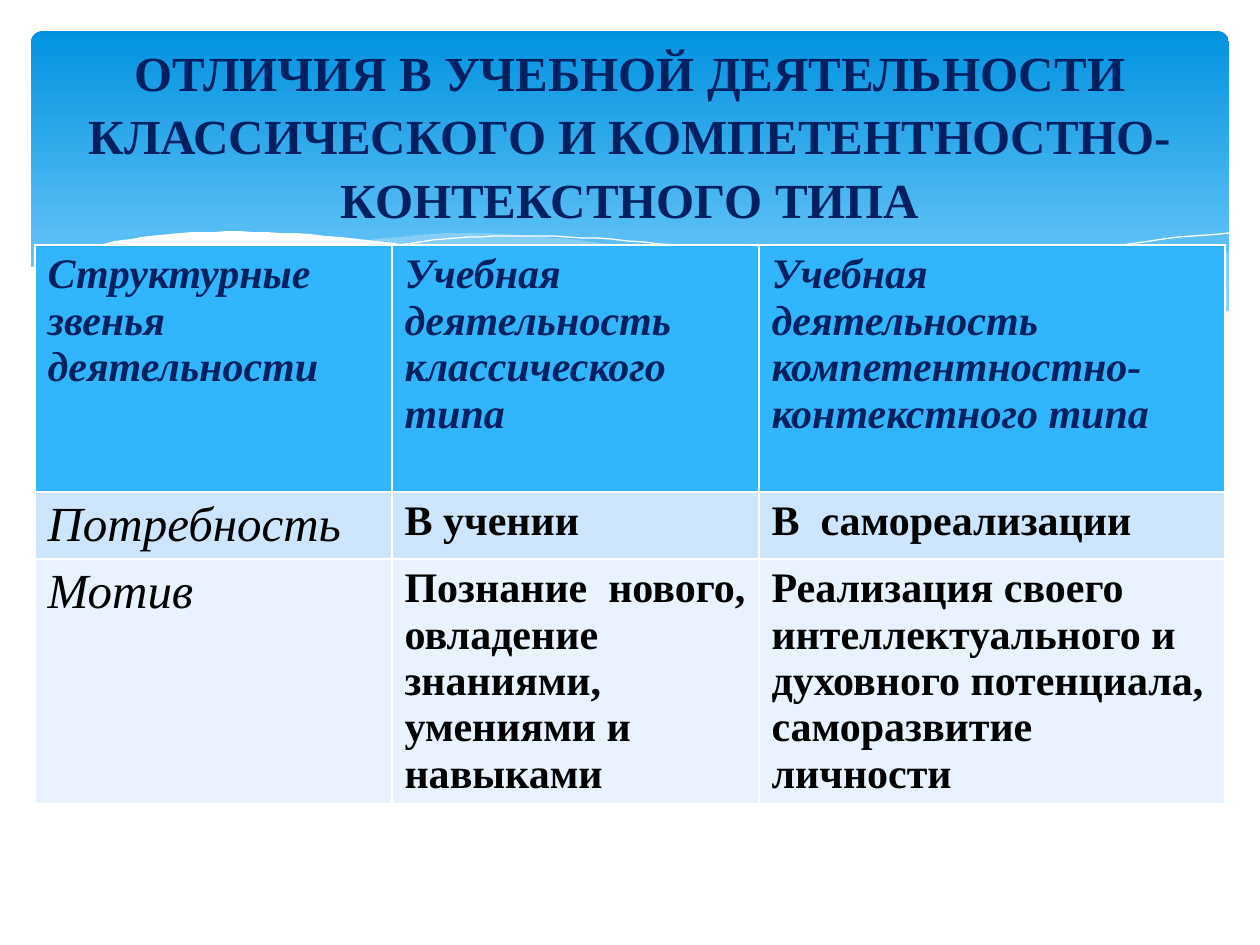
from lxml import etree
from pptx import Presentation
from pptx import util as u
from pptx.dml.color import RGBColor
from pptx.enum import shapes, text
from pptx.oxml.ns import qn

PX = u.Inches(1) // 126
FONT = "Times New Roman"
NAVY = RGBColor(0x00, 0x20, 0x60)
BLACK = RGBColor(0x00, 0x00, 0x00)
WHITE = RGBColor(0xFF, 0xFF, 0xFF)
SKY_DEEP = RGBColor(0x02, 0x93, 0xE0)
SKY_LIGHT = RGBColor(0x83, 0xD3, 0xFE)
MIST = RGBColor(0xC6, 0xE7, 0xFC)
HEADER = RGBColor(0x31, 0xB6, 0xFD)
BAND = RGBColor(0xCE, 0xE5, 0xFE)
PALE = RGBColor(0xE8, 0xF3, 0xFF)

TITLE = "ОТЛИЧИЯ В УЧЕБНОЙ ДЕЯТЕЛЬНОСТИ КЛАССИЧЕСКОГО И КОМПЕТЕНТНОСТНО-КОНТЕКСТНОГО ТИПА"
ROWS = [
    ["Структурные звенья деятельности",
     "Учебная\nдеятельность классического типа",
     "Учебная\nдеятельность компетентностно-контекстного типа"],
    ["Потребность", "В учении", "В  самореализации"],
    ["Мотив",
     "Познание  нового,\nовладение знаниями, умениями и навыками",
     "Реализация своего\nинтеллектуального и\nдуховного потенциала,\nсаморазвитие личности"],
]

RIGHT_TOP = [(1229, 251), (1142, 268), (1085, 281), (982, 305), (833, 334)]
RIGHT_BOTTOM = [(833, 334), (922, 346), (1011, 350), (1089, 347), (1160, 337),
                (1213, 324), (1229, 311)]
MIDDLE_TOP = [(1125, 344), (1055, 334), (977, 320), (890, 302), (793, 280), (717, 262),
              (648, 250), (586, 241), (503, 234), (433, 234), (360, 241)]
MIDDLE_BOTTOM = [(360, 241), (431, 251), (509, 266), (566, 280), (668, 302), (757, 321),
                 (838, 335), (910, 345), (989, 350), (1068, 350), (1125, 344)]
LEFT_CREST = [(389, 246), (445, 239), (505, 236), (567, 237), (643, 242), (733, 252),
              (838, 268), (958, 291), (1047, 316), (1143, 343)]
RIGHT_CREST = [(772, 324), (876, 296), (978, 272), (1091, 251), (1164, 239), (1229, 233)]
FRONT_TOP = [(1231, 310), (1172, 330), (1103, 344), (1040, 349), (980, 348), (892, 343),
             (789, 330), (699, 309), (599, 286), (563, 277), (493, 261), (427, 248),
             (341, 237), (266, 232), (203, 232), (150, 236), (107, 243), (74, 251),
             (50, 261), (29, 268)]
FRONT_BASE = [(29, 415), (1231, 415)]


def smooth(points, steps=5):
    padded = [points[0], *points, points[-1]]
    curve = [points[0]]
    for a, b, c, d in zip(padded, padded[1:], padded[2:], padded[3:]):
        for step in range(1, steps + 1):
            t = step / steps
            curve.append(tuple(
                (2 * q + (r - p) * t + (2 * p - 5 * q + 4 * r - s) * t ** 2
                 + (3 * q - p - 3 * r + s) * t ** 3) / 2
                for p, q, r, s in zip(a, b, c, d)))
    return curve


class SlideBuilder:
    def __init__(self, deck):
        self.page = deck.slides.add_slide(deck.slide_layouts[5])

    def font(self, para, size, color, bold, italic=False):
        for span in para.runs:
            span.font.name = FONT
            span.font.size = u.Pt(size)
            span.font.color.rgb = color
            span.font.bold = bold
            span.font.italic = italic

    def backdrop(self, x, y, width, height):
        box = self.page.shapes.add_shape(
            shapes.MSO_SHAPE.ROUNDED_RECTANGLE, x * PX, y * PX, width * PX, height * PX)
        box.adjustments[0] = 0.034
        box.shadow.inherit = False
        box.line.fill.background()
        box.fill.gradient()
        box.fill.gradient_angle = 270
        for stop, color, position in zip(
                box.fill.gradient_stops, (SKY_DEEP, SKY_LIGHT), (0, 0.9)):
            stop.color.rgb = color
            stop.position = position

    def outline(self, points, close):
        builder = self.page.shapes.build_freeform(*points[0], scale=PX)
        builder.add_line_segments(points[1:], close=close)
        shape = builder.convert_to_shape()
        shape.shadow.inherit = False
        return shape

    def wave(self, points, color, opacity=100):
        shape = self.outline(points, True)
        shape.line.fill.background()
        shape.fill.solid()
        shape.fill.fore_color.rgb = color
        if opacity < 100:
            tint = shape.element.spPr.find(qn("a:solidFill"))[0]
            etree.SubElement(tint, qn("a:alpha"), val=str(opacity * 1000))

    def crest(self, points):
        shape = self.outline(smooth(points), False)
        shape.fill.background()
        shape.line.color.rgb = WHITE
        shape.line.width = 0

    def title(self, words, x, y, width, height):
        box = self.page.shapes.title
        box.element.getparent().append(box.element)
        box.left, box.top, box.width, box.height = (
            x * PX, y * PX, width * PX, height * PX)
        frame = box.text_frame
        frame.text = words
        frame.word_wrap = True
        frame.auto_size = text.MSO_AUTO_SIZE.NONE
        frame.vertical_anchor = text.MSO_ANCHOR.MIDDLE
        para = frame.paragraphs[0]
        para.alignment = text.PP_ALIGN.CENTER
        para.line_spacing = 1.08
        self.font(para, 28, NAVY, True)

    def table(self, rows, x, y, widths, heights):
        grid = self.page.shapes.add_table(
            len(rows), len(widths), x * PX, y * PX, sum(widths) * PX, sum(heights) * PX).table
        for column, width in zip(grid.columns, widths):
            column.width = width * PX
        for row, height in zip(grid.rows, heights):
            row.height = height * PX
        for r, (words, fill) in enumerate(zip(rows, (HEADER, BAND, PALE))):
            for c, content in enumerate(words):
                cell = grid.cell(r, c)
                cell.fill.solid()
                cell.fill.fore_color.rgb = fill
                cell.text_frame.text = content
                is_header, is_label = r == 0, r > 0 and c == 0
                for para in cell.text_frame.paragraphs:
                    self.font(para, 28 if is_label else 24, NAVY if is_header else BLACK,
                              not is_label, is_header or is_label)


def main():
    deck = Presentation()
    deck.slide_width, deck.slide_height = 1260 * PX, 945 * PX
    slide = SlideBuilder(deck)
    slide.backdrop(31, 31, 1198, 340)
    slide.wave(smooth(RIGHT_TOP) + smooth(RIGHT_BOTTOM), MIST, 29)
    slide.wave(smooth(MIDDLE_TOP) + smooth(MIDDLE_BOTTOM), MIST, 40)
    slide.crest(LEFT_CREST)
    slide.crest(RIGHT_CREST)
    slide.wave(smooth(FRONT_TOP) + FRONT_BASE, WHITE)
    slide.table(ROWS, 35, 245, (357, 367, 466), (247, 67, 245))
    slide.title(TITLE, 63, 47, 1134, 172)
    deck.save("out.pptx")


if __name__ == "__main__":
    main()
